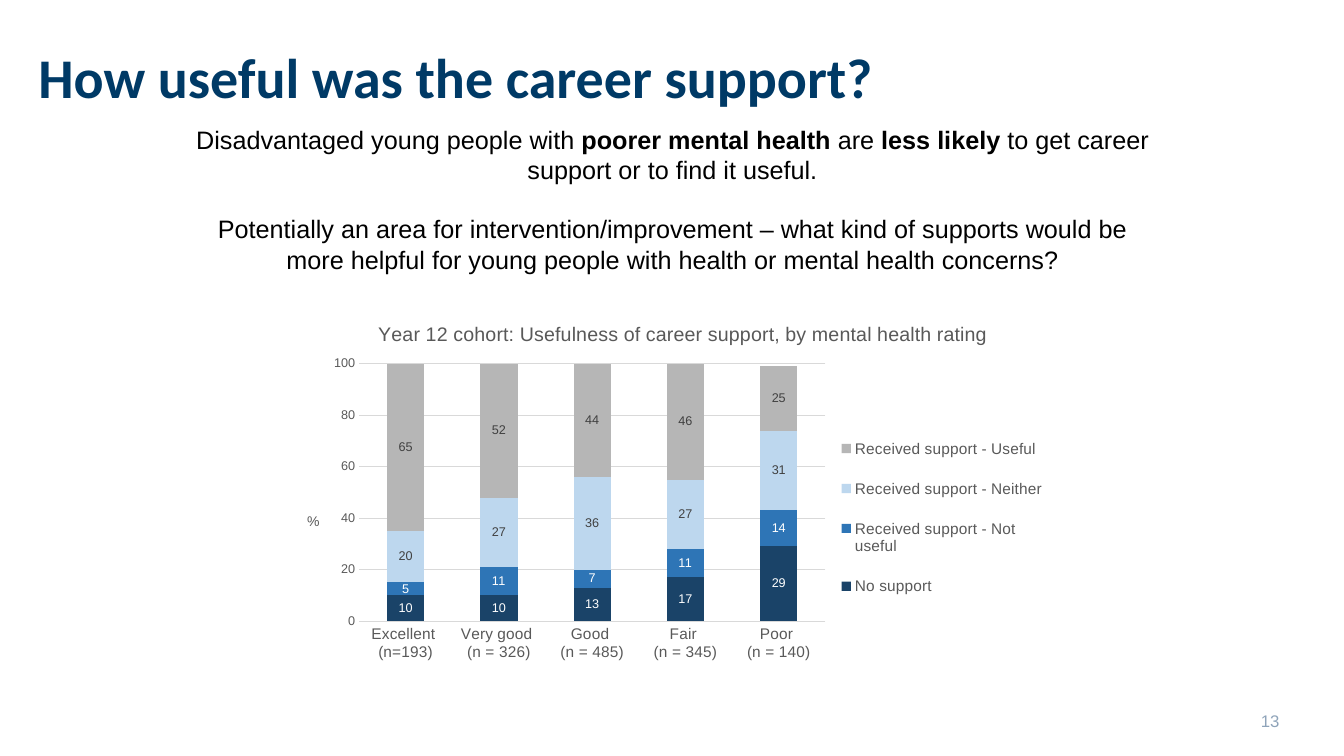
"""Build the slide on career support usefulness by mental health rating."""
import dataclasses
import typing

import lxml.etree
import pptx
import pptx.chart.data
import pptx.dml.color
import pptx.enum.chart
import pptx.enum.text
import pptx.oxml.ns
import pptx.util

Inches = pptx.util.Inches
Pt = pptx.util.Pt
Align = pptx.enum.text.PP_ALIGN
Anchor = pptx.enum.text.MSO_ANCHOR
qn = pptx.oxml.ns.qn

GREY_TEXT = "595959"
GRID_LINE = "D9D9D9"


@dataclasses.dataclass(frozen=True)
class Run:
    text: str
    bold: bool = False


@dataclasses.dataclass(frozen=True)
class TextBlock:
    box: tuple[float, float, float, float]
    paragraphs: list[list[Run]]
    size: float
    color: str
    font: str = "Arial"
    align: Align = Align.LEFT
    anchor: Anchor = Anchor.TOP
    margins: tuple[float, float] = (0, 0)
    gap: float = 0


@dataclasses.dataclass(frozen=True)
class Response:
    name: str
    values: tuple[int, ...]
    fill: str
    label: str


TEXT_BLOCKS = [
    TextBlock((9.69, 6.95, 3, 0.4), [[Run("13")]], 12, "8FA4BA",
              align=Align.RIGHT, anchor=Anchor.MIDDLE),
    TextBlock((0.38, 0.42, 11.5, 1.17), [[Run("How useful was the career support?", True)]],
              40, "003A66", font="Calibri"),
    TextBlock((1.81, 1.18, 9.72, 1.62), [
        [Run("Disadvantaged young people with "), Run("poorer mental health ", True),
         Run("are "), Run("less likely ", True),
         Run("to get career support or to find it useful.")],
        [Run("Potentially an area for intervention/improvement – what kind of supports would be "
             "more helpful for young people with health or mental health concerns?")],
    ], 18, "000000", align=Align.CENTER, margins=(0.1, 0.05), gap=21),
]

RATINGS = ["Excellent \n(n=193)", "Very good \n(n = 326)", "Good \n(n = 485)",
           "Fair \n(n = 345)", "Poor \n(n = 140)"]

RESPONSES = [
    Response("No support", (10, 10, 13, 17, 29), "1A4368", "FFFFFF"),
    Response("Received support - Not useful", (5, 11, 7, 11, 14), "2E75B6", "FFFFFF"),
    Response("Received support - Neither", (20, 27, 36, 27, 31), "BDD7EE", "404040"),
    Response("Received support - Useful", (65, 52, 44, 46, 25), "B6B6B6", "404040"),
]


def rgb(color: str) -> pptx.dml.color.RGBColor:
    """Turn a hex string into a colour."""
    return pptx.dml.color.RGBColor.from_string(color)


def style(font: typing.Any, size: float, color: str, name: str = "Arial", bold: bool = False) -> None:
    """Set the face, size, weight and colour of a font."""
    font.name, font.size, font.bold = name, Pt(size), bold
    font.color.rgb = rgb(color)


def add_text(slide: typing.Any, block: TextBlock) -> None:
    """Add a text box, run by run."""
    frame = slide.shapes.add_textbox(*map(Inches, block.box)).text_frame
    frame.word_wrap = True
    frame.vertical_anchor = block.anchor
    side, top = map(Inches, block.margins)
    frame.margin_left = frame.margin_right = side
    frame.margin_top = frame.margin_bottom = top
    for index, runs in enumerate(block.paragraphs):
        paragraph = frame.add_paragraph() if index else frame.paragraphs[0]
        paragraph.alignment = block.align
        paragraph.space_before = Pt(block.gap if index else 0)
        for part in runs:
            run = paragraph.add_run()
            run.text = part.text
            style(run.font, block.size, block.color, block.font, part.bold)


def place(element: typing.Any, index: int, inner: bool = False, **fractions: float) -> None:
    """Give a chart part a fixed place, in fractions of the chart."""
    for old in element.findall(qn("c:layout")):
        element.remove(old)
    layout = lxml.etree.Element(qn("c:layout"))
    manual = lxml.etree.SubElement(layout, qn("c:manualLayout"))
    settings: dict[str, typing.Any] = {"layoutTarget": "inner"} if inner else {}
    settings |= {"xMode": "edge", "yMode": "edge"} | fractions
    for tag, value in settings.items():
        lxml.etree.SubElement(manual, qn(f"c:{tag}")).set("val", str(value))
    element.insert(index, layout)


def add_title(title: typing.Any, text: str, size: float, x: float, y: float) -> None:
    """Write a chart or axis title level at a fixed place."""
    run = title.text_frame.paragraphs[0].add_run()
    run.text = text
    style(run.font, size, GREY_TEXT)
    element = title._element
    element.find(f".//{qn('a:bodyPr')}").set("rot", "0")
    place(element, 1, x=x, y=y)


def style_line(line: typing.Any) -> None:
    """Draw a thin light grey line."""
    line.color.rgb = rgb(GRID_LINE)
    line.width = Pt(0.75)


def add_support_chart(slide: typing.Any) -> None:
    """Add the stacked columns of support by rating."""
    enums = pptx.enum.chart
    support = pptx.chart.data.CategoryChartData(number_format="0")
    support.categories = RATINGS
    for response in RESPONSES:
        support.add_series(response.name, response.values)
    chart = slide.shapes.add_chart(
        enums.XL_CHART_TYPE.COLUMN_STACKED, *map(Inches, (2.79, 3, 7.71, 3.81)), support).chart
    style(chart.font, 10, "000000")
    chart.has_title = True
    add_title(chart.chart_title, "Year 12 cohort: Usefulness of career support, by mental health rating",
              14, 0.12, 0.04)

    columns = chart.plots[0]
    columns.gap_width, columns.overlap, columns.vary_by_categories = 150, 100, False
    for series, response in zip(columns.series, RESPONSES):
        series.format.fill.solid()
        series.format.fill.fore_color.rgb = rgb(response.fill)
        labels = series.data_labels
        labels.show_value = True
        labels.number_format, labels.number_format_is_linked = "0", False
        style(labels.font, 9, response.label)

    rating_axis, percent_axis = chart.category_axis, chart.value_axis
    for axis, size in ((rating_axis, 11), (percent_axis, 9)):
        axis.major_tick_mark = axis.minor_tick_mark = enums.XL_TICK_MARK.NONE
        style(axis.tick_labels.font, size, GREY_TEXT)
    style_line(rating_axis.format.line)
    percent_axis.format.line.fill.background()
    style_line(percent_axis.major_gridlines.format.line)
    percent_axis.minimum_scale, percent_axis.maximum_scale, percent_axis.major_unit = 0, 100, 20
    percent_axis.tick_labels.number_format = "0"
    percent_axis.tick_labels.number_format_is_linked = False
    add_title(percent_axis.axis_title, "%", 10, 0.03, 0.54)

    chart.has_legend = True
    chart.legend.position = enums.XL_LEGEND_POSITION.RIGHT
    chart.legend.include_in_layout = False
    style(chart.legend.font, 11, GREY_TEXT)
    place(chart.legend._element, 1, x=0.71, y=0.3, w=0.28, h=0.52)
    plot_area = chart._chartSpace.find(f".//{qn('c:plotArea')}")
    place(plot_area, 0, inner=True, x=0.1, y=0.16, w=0.6, h=0.67)


def main() -> None:
    """Build and save the presentation."""
    deck = pptx.Presentation()
    deck.slide_width, deck.slide_height = Inches(13.33), Inches(7.5)
    slide = deck.slides.add_slide(deck.slide_layouts[6])
    for block in TEXT_BLOCKS:
        add_text(slide, block)
    add_support_chart(slide)
    deck.save("out.pptx")


if __name__ == "__main__":
    main()
